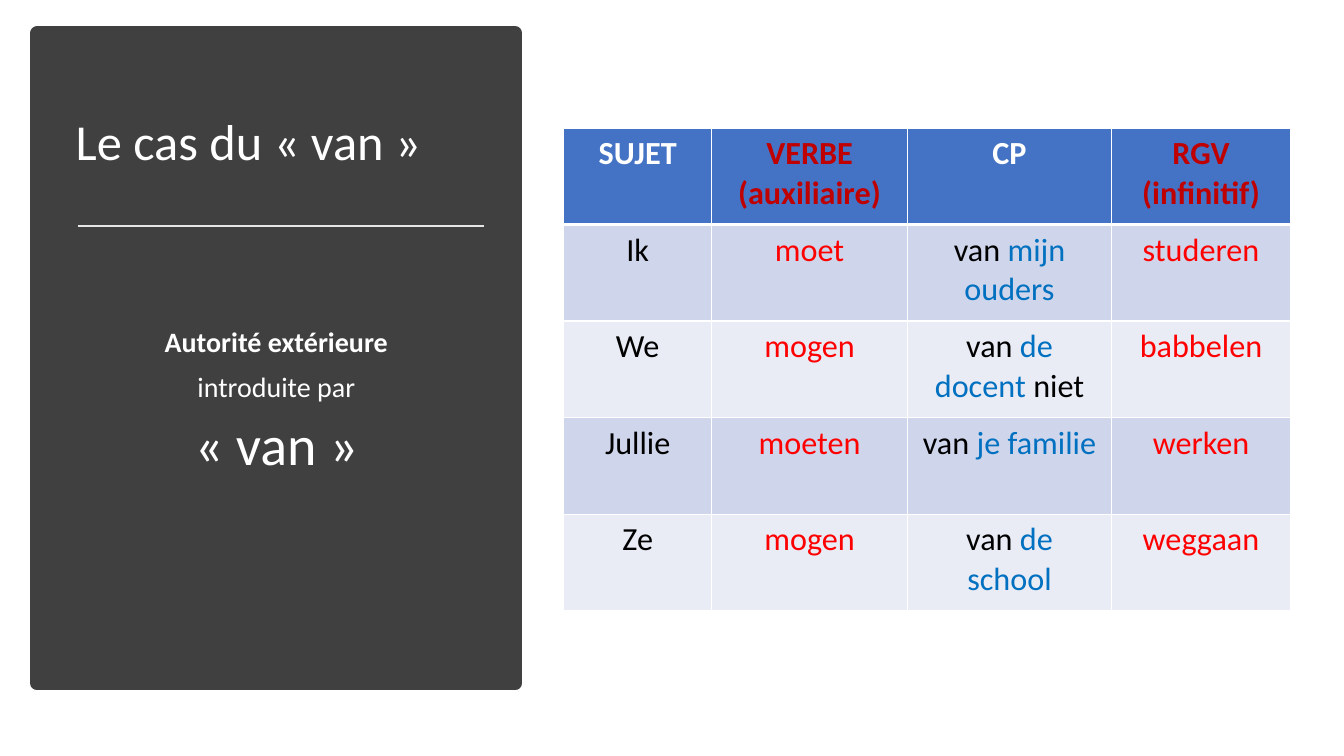
import pptx
import pptx.util
import pptx.dml.color
import pptx.enum.shapes
import pptx.enum.text
import lxml.etree

TITLE = "Le cas du « van »"
BODY = [
    ("Autorité extérieure", "body", True),
    ("introduite par", "body", False),
    ("« van »", "keyword", False),
]
HEADER = [
    ("SUJET", "light"),
    ("VERBE\n(auxiliaire)", "dark_red"),
    ("CP", "light"),
    ("RGV\n(infinitif)", "dark_red"),
]
SENTENCES = [
    ("Ik", "moet", [("van ", "dark"), ("mijn ouders", "blue")], "studeren"),
    ("We", "mogen",
     [("van ", "dark"), ("de docent ", "blue"), ("niet", "dark")], "babbelen"),
    ("Jullie", "moeten", [("van ", "dark"), ("je familie", "blue")], "werken"),
    ("Ze", "mogen", [("van ", "dark"), ("de school", "blue")], "weggaan"),
]

THEME = {
    "font": "Calibri",
    "sizes": {"title": 36, "body": 20, "keyword": 40, "table": 23},
    "colors": {
        "light": "FFFFFF", "dark": "000000", "panel": "404040",
        "rule": "E7E6E6", "header": "4472C4", "band_a": "CFD5EA",
        "band_b": "E9EBF5", "dark_red": "C00000", "red": "FF0000",
        "blue": "0070C0",
    },
}

WIDTH, HEIGHT = pptx.util.Inches(13.33), pptx.util.Inches(7.5)
PANEL = (2.78, 4.4, 35.56, 86)
TITLE_BOX = (4.88, 9.33, 31.36, 19.6)
BODY_BOX = (4.88, 30.93, 31.36, 55.07)
RULE = (5.78, 29.87, 36.01, 29.87)
TABLE = (41.94, 16.93, 54.09, 63.87)
COLUMNS = (11.03, 14.55, 15.2, 13.31)
CENTER = pptx.enum.text.PP_ALIGN.CENTER


def share(box):
    return [round(v / 100 * (HEIGHT if i % 2 else WIDTH))
            for i, v in enumerate(box)]


def color(name):
    return pptx.dml.color.RGBColor.from_string(THEME["colors"][name])


def place(sp, box):
    sp.left, sp.top, sp.width, sp.height = share(box)


def write(p, text, size="table", ink="light", bold=False, **layout):
    for name, value in layout.items():
        setattr(p, name, value)
    r = p.add_run()
    r.text = text
    r.font.name = THEME["font"]
    r.font.size = pptx.util.Pt(THEME["sizes"][size])
    r.font.bold = bold
    r.font.color.rgb = color(ink)


def next_paragraph(tf, index):
    return tf.add_paragraph() if index else tf.paragraphs[0]


def remove_bullet(p):
    pPr = p._p.get_or_add_pPr()
    pPr.set("marL", "0")
    pPr.set("indent", "0")
    lxml.etree.SubElement(pPr, pptx.oxml.ns.qn("a:buNone"))


def add_borders(cell, widths):
    qn = pptx.oxml.ns.qn
    tcPr = cell._tc.get_or_add_tcPr()
    for i, (side, width) in enumerate(zip("LRTB", widths)):
        ln = lxml.etree.Element(qn("a:ln" + side), w=str(pptx.util.Pt(width)))
        fill = lxml.etree.SubElement(ln, qn("a:solidFill"))
        lxml.etree.SubElement(fill, qn("a:srgbClr"),
                              val=THEME["colors"]["light"])
        tcPr.insert(i, ln)


def add_panel(s):
    x, y, w, h = share(PANEL)
    panel = s.shapes.add_shape(
        pptx.enum.shapes.MSO_SHAPE.RECTANGLE, x, y, w, h)
    panel.shadow.inherit = False
    panel.fill.solid()
    panel.fill.fore_color.rgb = color("panel")
    panel.line.color.rgb = color("panel")
    panel.line.width = pptx.util.Pt(10)
    s.shapes.title.element.addprevious(panel.element)


def add_texts(s):
    title, body = s.shapes.title, s.placeholders[1]
    for sp, box in ((title, TITLE_BOX), (body, BODY_BOX)):
        place(sp, box)
        sp.text_frame.word_wrap = True
        sp.text_frame.auto_size = pptx.enum.text.MSO_AUTO_SIZE.NONE
    title.text_frame.vertical_anchor = pptx.enum.text.MSO_ANCHOR.MIDDLE
    write(title.text_frame.paragraphs[0], TITLE, "title", line_spacing=0.9,
          alignment=pptx.enum.text.PP_ALIGN.LEFT)
    tf = body.text_frame
    tf.vertical_anchor = pptx.enum.text.MSO_ANCHOR.TOP
    tf.margin_top = pptx.util.Inches(0.94)
    for i, (text, size, bold) in enumerate(BODY):
        p = next_paragraph(tf, i)
        write(p, text, size, bold=bold, alignment=CENTER, line_spacing=0.9,
              space_before=pptx.util.Pt(10))
        remove_bullet(p)


def add_rule(s):
    rule = s.shapes.add_connector(
        pptx.enum.shapes.MSO_CONNECTOR.STRAIGHT, *share(RULE))
    rule.line.color.rgb = color("rule")
    rule.line.width = pptx.util.Pt(1.75)
    lxml.etree.SubElement(rule.element.spPr, pptx.oxml.ns.qn("a:effectLst"))


def add_sentence_table(s):
    rows = [[[cell] for cell in HEADER]]
    for subject, verb, complement, infinitive in SENTENCES:
        rows.append([[(subject, "dark")], [(verb, "red")],
                     complement, [(infinitive, "red")]])
    table = s.shapes.add_table(len(rows), len(COLUMNS), *share(TABLE)).table
    for column, width in zip(table.columns, COLUMNS):
        column.width = round(width / 100 * WIDTH)
    for i, row in enumerate(rows):
        band = "header" if i == 0 else "band_a" if i % 2 else "band_b"
        for j, runs in enumerate(row):
            cell = table.cell(i, j)
            cell.margin_left = cell.margin_right = pptx.util.Inches(0.13)
            cell.margin_top = cell.margin_bottom = pptx.util.Inches(0.06)
            cell.fill.solid()
            cell.fill.fore_color.rgb = color(band)
            add_borders(cell, (1, 1, 3 if i == 1 else 1, 3 if i == 0 else 1))
            for text, ink in runs:
                for k, line in enumerate(text.split("\n")):
                    write(next_paragraph(cell.text_frame, k), line, ink=ink,
                          bold=i == 0, alignment=CENTER)


def main():
    prs = pptx.Presentation()
    prs.slide_width, prs.slide_height = WIDTH, HEIGHT
    s = prs.slides.add_slide(prs.slide_layouts[1])
    add_panel(s)
    add_texts(s)
    add_rule(s)
    add_sentence_table(s)
    prs.save("out.pptx")


if __name__ == "__main__":
    main()
